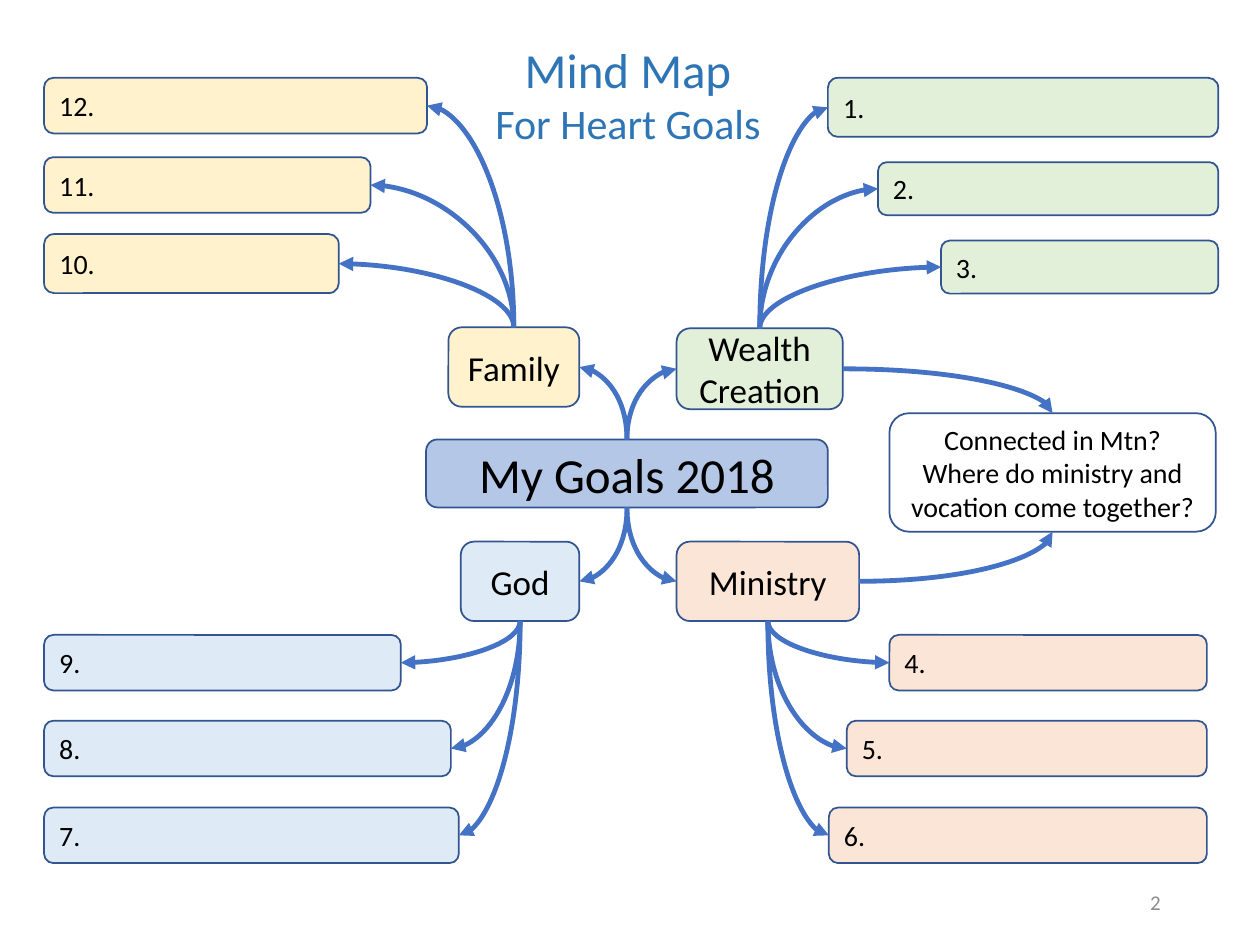
from collections import namedtuple

from lxml import etree
from pptx import Presentation
from pptx.dml.color import RGBColor
from pptx.enum.shapes import MSO_CONNECTOR, MSO_SHAPE
from pptx.enum.text import MSO_ANCHOR, MSO_AUTO_SIZE, PP_ALIGN
from pptx.oxml.ns import qn
from pptx.util import Cm, Pt

Box = namedtuple("Box", "left top width height")

COLORS = {
    "ink": "000000",
    "title": "2E75B6",
    "number": "8C8C8C",
    "border": "325491",
    "arrow": "4472C4",
    "center": "B4C7E7",
    "wealth": "E2F0D9",
    "ministry": "FBE5D6",
    "god": "DEEBF7",
    "family": "FFF2CC",
    "question": "FFFFFF",
}
TOP, LEFT, BOTTOM, RIGHT = range(4)

BRANCHES = [
    ("Wealth Creation", "wealth", "right", "upper", Box(13.64, 1.57, 10.92, 6.68), (3.35, 1.63),
     [("1.", 0, 7.87, 1.19), ("2.", 1.7, 6.86, 1.07), ("3.", 3.28, 5.59, 1.07)]),
    ("Ministry", "ministry", "right", "lower", Box(13.64, 10.92, 10.69, 6.48), (3.68, 1.6),
     [("4.", 1.88, 6.4, 1.12), ("5.", 3.61, 7.26, 1.12), ("6.", 5.36, 7.62, 1.12)]),
    ("God", "god", "left", "lower", Box(0.89, 10.92, 10.79, 6.48), (2.39, 1.6),
     [("9.", 1.88, 7.19, 1.12), ("8.", 3.61, 8.2, 1.12), ("7.", 5.36, 8.36, 1.12)]),
    ("Family", "family", "left", "upper", Box(0.89, 1.57, 10.79, 6.63), (2.64, 1.6),
     [("10.", 3.15, 5.94, 1.19), ("11.", 1.6, 6.58, 1.12), ("12.", 0, 7.72, 1.12)]),
]


def rgb(name):
    """Return the named colour."""
    return RGBColor.from_string(COLORS[name])


def format_para(para, size, color, align):
    """Align a paragraph and style its runs."""
    para.alignment = align
    for span in para.runs:
        span.font.name = "Calibri"
        span.font.size = Pt(size)
        span.font.color.rgb = rgb(color)


def add_card(page, box, text, fill, size, align=PP_ALIGN.CENTER):
    """Add a rounded card with text to the box."""
    card = page.shapes.add_shape(MSO_SHAPE.ROUNDED_RECTANGLE, *map(Cm, box))
    card.shadow.inherit = False
    card.fill.solid()
    card.fill.fore_color.rgb = rgb(fill)
    card.line.color.rgb = rgb("border")
    card.line.width = Pt(1)
    frame = card.text_frame
    frame.word_wrap = True
    frame.vertical_anchor = MSO_ANCHOR.MIDDLE
    frame.text = text
    for para in frame.paragraphs:
        format_para(para, size, "ink", align)
    return card


def side_point(card, side):
    """Return the middle of one side of a card."""
    across = {LEFT: 0, RIGHT: card.width}.get(side, card.width // 2)
    down = {TOP: 0, BOTTOM: card.height}.get(side, card.height // 2)
    return card.left + across, card.top + down


def add_curve(page, source, source_side, target, target_side):
    """Join two cards with a quarter-curve arrow."""
    start, end = side_point(source, source_side), side_point(target, target_side)
    curve = page.shapes.add_connector(MSO_CONNECTOR.CURVE, *start, *end)
    curve.begin_connect(source, source_side)
    curve.end_connect(target, target_side)
    curve.line.color.rgb = rgb("arrow")
    curve.line.width = Pt(2.75)

    shape_properties = curve._element.spPr
    shape_properties.find(qn("a:prstGeom")).set("prst", "curvedConnector2")
    line = shape_properties.find(qn("a:ln"))
    etree.SubElement(line, qn("a:tailEnd")).set("type", "triangle")
    etree.SubElement(shape_properties, qn("a:effectLst"))

    run, rise = end[0] - start[0], end[1] - start[1]
    width, height = abs(run), abs(rise)
    flip_h, flip_v, turn = run < 0, rise < 0, 0
    if source_side in (TOP, BOTTOM):
        width, height = height, width
        flip_h, flip_v, turn = rise < 0, run > 0, 90
    curve.left = (start[0] + end[0] - width) // 2
    curve.top = (start[1] + end[1] - height) // 2
    curve.width, curve.height = width, height
    frame = shape_properties.find(qn("a:xfrm"))
    frame.set("rot", str(turn * 60000))
    frame.set("flipH", str(int(flip_h)))
    frame.set("flipV", str(int(flip_v)))


def add_branch(page, box, center, topic_text, fill, side, level, topic_size, goals):
    """Add a topic at the inner corner and its goals along the outer edge."""
    is_right, is_upper = side == "right", level == "upper"
    inner, outer = (LEFT, RIGHT) if is_right else (RIGHT, LEFT)
    away, toward = (TOP, BOTTOM) if is_upper else (BOTTOM, TOP)
    width, height = topic_size
    left = box.left if is_right else box.left + box.width - width
    top = box.top + box.height - height if is_upper else box.top
    topic = add_card(page, Box(left, top, width, height), topic_text, fill, 20)
    add_curve(page, center, away if is_upper else BOTTOM, topic, inner)

    for label, offset, goal_width, goal_height in goals:
        goal_left = box.left + box.width - goal_width if is_right else box.left
        goal_box = Box(goal_left, box.top + offset, goal_width, goal_height)
        goal = add_card(page, goal_box, label, fill, 16, PP_ALIGN.LEFT)
        add_curve(page, topic, away, goal, inner)
    return topic


def add_question(page, box, wealth, ministry):
    """Add the question that links wealth creation and ministry."""
    text = "Connected in Mtn?\nWhere do ministry and vocation come together?"
    question = add_card(page, box, text, "question", 16)
    add_curve(page, ministry, RIGHT, question, BOTTOM)
    add_curve(page, wealth, RIGHT, question, TOP)


def add_title(page, box):
    """Place the two-line title."""
    title = page.shapes.title
    title.left, title.top, title.width, title.height = map(Cm, box)
    frame = title.text_frame
    frame.text = "Mind Map\nFor Heart Goals"
    frame.word_wrap = True
    frame.auto_size = MSO_AUTO_SIZE.NONE
    frame.vertical_anchor = MSO_ANCHOR.TOP
    for para, size in zip(frame.paragraphs, (28, 24)):
        format_para(para, size, "title", PP_ALIGN.CENTER)


def add_page_number(page, box):
    """Add the page number at the lower right."""
    frame = page.shapes.add_textbox(*map(Cm, box)).text_frame
    frame.word_wrap = True
    frame.vertical_anchor = MSO_ANCHOR.MIDDLE
    frame.text = "2"
    format_para(frame.paragraphs[0], 12, "number", PP_ALIGN.RIGHT)


def main():
    """Build the mind map and save it."""
    deck = Presentation()
    deck.slide_width, deck.slide_height = Cm(25.4), Cm(19.05)
    page = deck.slides.add_slide(deck.slide_layouts[5])
    add_title(page, Box(9.7, 0.66, 5.92, 2.49))
    add_page_number(page, Box(17.93, 17.68, 5.72, 1.02))
    center = add_card(page, Box(8.59, 8.86, 8.1, 1.37), "My Goals 2018", "center", 28)
    topics = {}
    for text, fill, side, level, box, topic_size, goals in BRANCHES:
        topics[fill] = add_branch(page, box, center, text, fill, side, level, topic_size, goals)
    add_question(page, Box(17.93, 8.33, 6.58, 2.39), topics["wealth"], topics["ministry"])
    deck.save("out.pptx")


if __name__ == "__main__":
    main()
